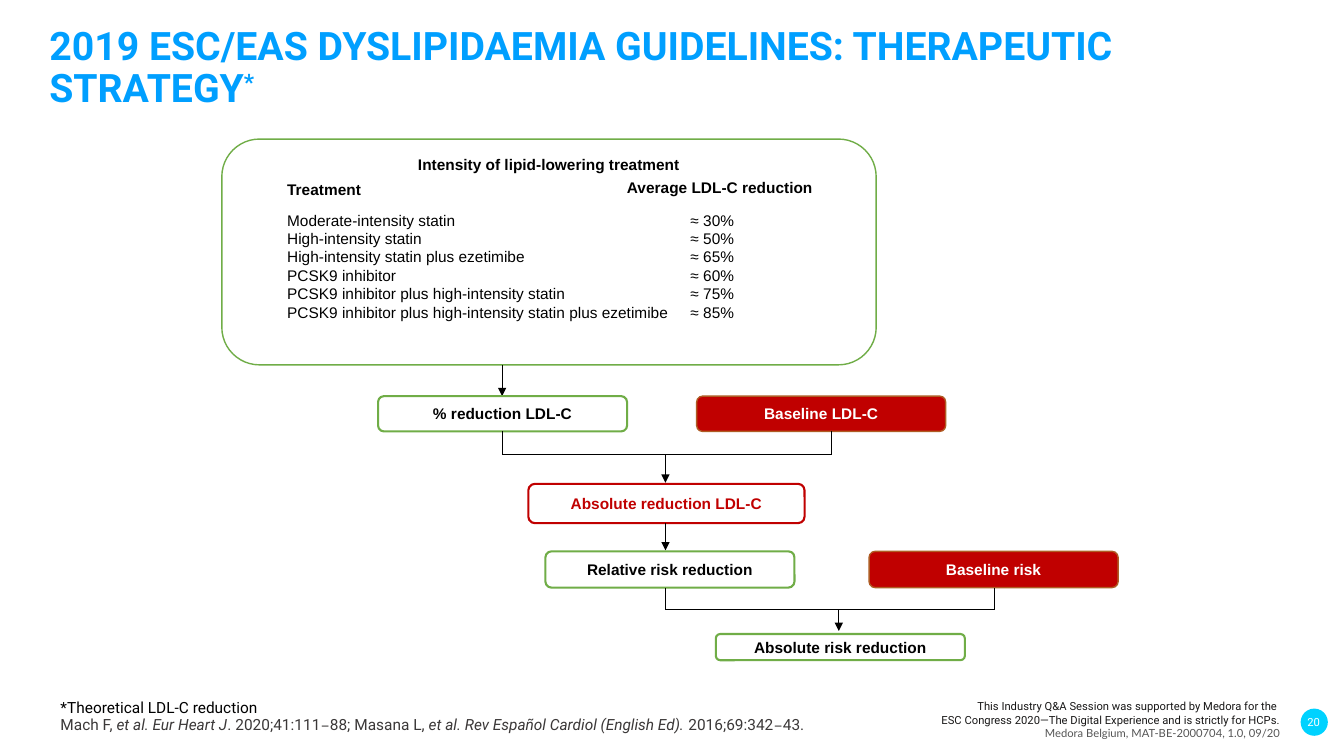
from lxml.etree import SubElement
from pptx import Presentation
from pptx.dml.color import RGBColor
from pptx.enum.shapes import MSO_CONNECTOR as LINK, MSO_SHAPE as SHAPE
from pptx.enum.text import MSO_ANCHOR as ANCHOR, PP_ALIGN as ALIGN
from pptx.oxml.ns import qn
from pptx.util import Inches, Pt

COLORS = {
    "title": "009FFF", "green": "70AD47", "red": "C00000", "rust": "AF5C24",
    "black": "000000", "white": "FFFFFF", "ink": "181717", "cite": "3B3838",
    "grey": "555555", "cyan": "00D2FF",
}
TREATMENTS = [
    ("Moderate-intensity statin", 30),
    ("High-intensity statin", 50),
    ("High-intensity statin plus ezetimibe", 65),
    ("PCSK9 inhibitor", 60),
    ("PCSK9 inhibitor plus high-intensity statin", 75),
    ("PCSK9 inhibitor plus high-intensity statin plus ezetimibe", 85),
]
CITATION = [
    ("Mach F, ", "plain"), ("et al. Eur Heart J", "italic"),
    (". 2020;41:111", "plain"), ("–", "dash"), ("88; Masana L, ", "plain"),
    ("et al. Rev Español Cardiol (English Ed). ", "italic"),
    ("2016;69:342", "plain"), ("–", "dash"), ("43.", "plain"),
]


def rgb(name):
    return RGBColor.from_string(COLORS[name])


def style(para, size=11, color="black", face="Arial", bold=False,
          align=ALIGN.LEFT, space=None):
    para.alignment = align
    if space:
        para.line_spacing = space
    font = para.font
    font.size, font.name, font.bold = Pt(size), face, bold
    font.color.rgb = rgb(color)


def text_box(slide, x, y, w, h, anchor=ANCHOR.TOP, inset=True):
    frame = slide.shapes.add_textbox(
        Inches(x), Inches(y), Inches(w), Inches(h)).text_frame
    frame.word_wrap = True
    frame.vertical_anchor = anchor
    if not inset:
        frame.margin_left = frame.margin_right = 0
        frame.margin_top = frame.margin_bottom = 0
    return frame


def label(slide, text, x, y, w, h):
    para = text_box(slide, x, y, w, h).paragraphs[0]
    para.text = text
    style(para, bold=True)


def node(slide, text, x, y, w, h, fill="white", edge="green", ink="black",
         width=1.5, anchor=ANCHOR.MIDDLE):
    box = slide.shapes.add_shape(SHAPE.ROUNDED_RECTANGLE, Inches(x),
                                 Inches(y), Inches(w), Inches(h))
    box.shadow.inherit = False
    box.fill.solid()
    box.fill.fore_color.rgb = rgb(fill)
    box.line.color.rgb = rgb(edge)
    box.line.width = Pt(width)
    frame = box.text_frame
    frame.vertical_anchor = anchor
    para = frame.paragraphs[0]
    para.text = text
    style(para, color=ink, bold=True, align=ALIGN.CENTER)


def link(slide, x1, y1, x2, y2, arrow=False):
    line = slide.shapes.add_connector(LINK.STRAIGHT, Inches(x1), Inches(y1),
                                      Inches(x2), Inches(y2))
    line.line.color.rgb = rgb("black")
    line.line.width = Pt(0.5)
    if arrow:
        SubElement(line.line._get_or_add_ln(), qn("a:tailEnd"),
                   type="triangle")
    SubElement(line._element.spPr, qn("a:effectLst"))


def merge(slide, left, right, top, bar, stem, tip):
    """Join two boxes by a bar, with an arrow down to the next box."""
    for x in (left, right):
        link(slide, x, top, x, bar)
    link(slide, left, bar, right, bar)
    link(slide, stem, bar, stem, tip, arrow=True)


def add_title(slide):
    frame = text_box(slide, 0.49, 0.4, 12.41, 0.7, ANCHOR.BOTTOM, False)
    para = frame.paragraphs[0]
    para.text = "2019 ESC/EAS DYSLIPIDAEMIA GUIDELINES: THERAPEUTIC STRATEGY"
    star = para.add_run()
    star.text = "*"
    star._r.get_or_add_rPr().set("baseline", "30000")
    style(para, 28, "title", "Roboto", True, space=0.9)


def add_panel(slide):
    node(slide, "Intensity of lipid-lowering treatment", 2.2, 1.38, 6.49, 2.24,
         width=1, anchor=ANCHOR.TOP)
    label(slide, "Treatment", 2.75, 1.74, 1.2, 0.29)
    label(slide, "Average LDL-C reduction", 6.12, 1.72, 2.3, 0.29)
    frame = text_box(slide, 2.75, 2.04, 4.9, 1.21)
    for i, (name, cut) in enumerate(TREATMENTS):
        para = frame.add_paragraph() if i else frame.paragraphs[0]
        para.text = f"{name}\t≈ {cut}%"
        tabs = SubElement(para._p.get_or_add_pPr(), qn("a:tabLst"))
        SubElement(tabs, qn("a:tab"), pos=str(Inches(4)), algn="l")
        style(para)


def add_flow(slide):
    solid = {"fill": "red", "edge": "rust", "ink": "white", "width": 1}
    link(slide, 4.98, 3.62, 4.98, 3.93, arrow=True)
    node(slide, "% reduction LDL-C", 3.75, 3.93, 2.47, 0.35)
    node(slide, "Baseline LDL-C", 6.91, 3.93, 2.47, 0.35, **solid)
    merge(slide, 4.98, 8.25, 4.28, 4.51, 6.6, 4.79)
    node(slide, "Absolute reduction LDL-C", 5.24, 4.8, 2.74, 0.39,
         edge="red", ink="red")
    link(slide, 6.6, 5.19, 6.6, 5.46, arrow=True)
    node(slide, "Relative risk reduction", 5.41, 5.47, 2.47, 0.36)
    node(slide, "Baseline risk", 8.62, 5.47, 2.47, 0.36, **solid)
    merge(slide, 6.6, 9.86, 5.83, 6.05, 8.32, 6.26)
    node(slide, "Absolute risk reduction", 7.1, 6.29, 2.47, 0.26)


def add_notes(slide):
    """Footnote and citation at the lower left."""
    frame = text_box(slide, 0.6, 6.94, 8.01, 0.34, ANCHOR.BOTTOM, False)
    para = frame.paragraphs[0]
    para.text = "*Theoretical LDL-C reduction"
    style(para, face="Roboto", space=0.9)
    para = frame.add_paragraph()
    for text, kind in CITATION:
        run = para.add_run()
        run.text = text
        run.font.italic = kind == "italic"
        run.font.name = "Courier New" if kind == "dash" else "Roboto"
    style(para, color="cite", face="Roboto", space=0.9)


def add_footer(slide):
    frame = text_box(slide, 8.8, 6.93, 3.9, 0.41, ANCHOR.BOTTOM, False)
    para = frame.paragraphs[0]
    para.text = ("This Industry Q&A Session was supported by Medora for the \v"
                 "ESC Congress 2020—The Digital Experience and is strictly "
                 "for HCPs.")
    style(para, 8, "ink", "Roboto", align=ALIGN.RIGHT)
    para = frame.add_paragraph()
    para.text = "Medora Belgium, MAT-BE-2000704, 1.0, 09/20"
    style(para, 8, "grey", "Lato", align=ALIGN.RIGHT)

    disc = slide.shapes.add_shape(SHAPE.OVAL, Inches(12.9), Inches(7.03),
                                  Inches(0.27), Inches(0.27))
    disc.shadow.inherit = False
    disc.fill.solid()
    disc.fill.fore_color.rgb = rgb("cyan")
    disc.line.fill.background()
    frame = text_box(slide, 12.73, 7.04, 0.6, 0.25, ANCHOR.MIDDLE, False)
    para = frame.paragraphs[0]
    para.text = "20"
    style(para, 8, "white", "Roboto", align=ALIGN.CENTER)


def main():
    deck = Presentation()
    deck.slide_width, deck.slide_height = Inches(13.33), Inches(7.5)
    slide = deck.slides.add_slide(deck.slide_layouts[6])
    add_title(slide)
    add_panel(slide)
    add_flow(slide)
    add_notes(slide)
    add_footer(slide)
    deck.save("out.pptx")


if __name__ == "__main__":
    main()
